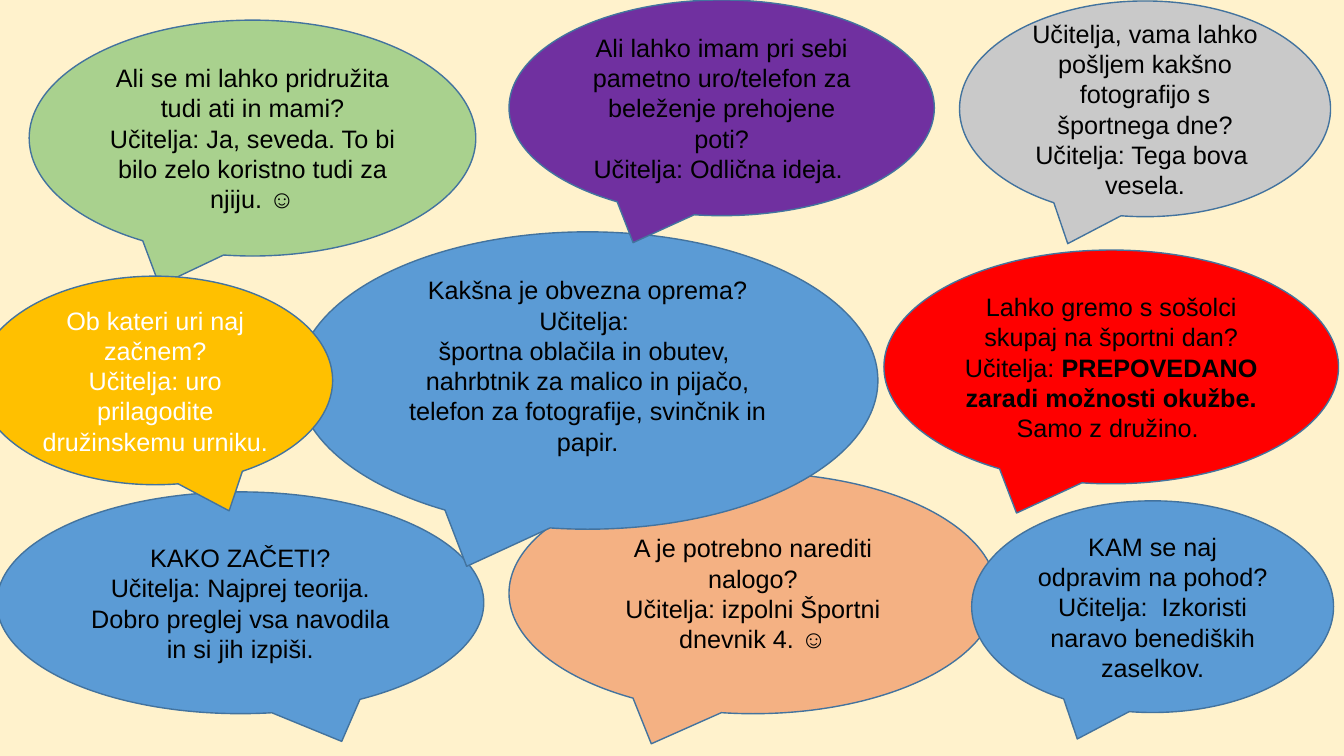
import pptx
import pptx.util
import pptx.dml.color
import pptx.enum.shapes
import pptx.enum.text

Pt = pptx.util.Pt
BLUE = "5B9BD5"
TAIL = 0.2083  # sideways reach of a tail, as a share of the bubble's width


def color(code):
    return pptx.dml.color.RGBColor.from_string(code)


def bubble(slide, box, fill, lines, ink="000000", side=-1, lift=0):
    """Draw a speech bubble; side -1 or 1 sends the tail left or right, lift raises the text.

    Each line is a list of runs; every second run is bold.
    """
    shape = slide.shapes.add_shape(
        pptx.enum.shapes.MSO_SHAPE.OVAL_CALLOUT, *map(Pt, box))
    shape.adjustments[0] = side * TAIL
    shape.adjustments[1] = 0.625
    shape.shadow.inherit = False
    shape.fill.solid()
    shape.fill.fore_color.rgb = color(fill)
    shape.line.color.rgb = color("43739E")
    shape.line.width = Pt(1)

    frame = shape.text_frame
    frame.word_wrap = True
    frame.vertical_anchor = pptx.enum.text.MSO_ANCHOR.MIDDLE
    frame.margin_bottom = Pt(3.6 + 2 * lift)
    for i, runs in enumerate(lines):
        para = frame.paragraphs[0] if i == 0 else frame.add_paragraph()
        para.alignment = pptx.enum.text.PP_ALIGN.CENTER
        for j, text in enumerate(runs):
            run = para.add_run()
            run.text = text
            run.font.name = "Arial"
            run.font.size = Pt(18)
            run.font.bold = j % 2 == 1
            run.font.color.rgb = color(ink)


def build(slide):
    """Place the bubbles from back to front."""
    back = slide.background.fill
    back.solid()
    back.fore_color.rgb = color("FFF2CC")

    bubble(slide, (20.9, 14.4, 319, 168.5), "A9D18E", [
        ["Ali se mi lahko pridružita tudi ati in mami?"],
        ["Učitelja: Ja, seveda. To bi bilo zelo koristno tudi za njiju. ☺"]])
    bubble(slide, (-2.2, 351.4, 347.8, 158.4), BLUE, [
        ["KAKO ZAČETI?"],
        ["Učitelja: Najprej teorija. Dobro preglej vsa navodila in si jih izpiši."]],
        side=1)
    bubble(slide, (363.6, 337.7, 348.5, 172.1), "F4B183", [
        ["A je potrebno narediti nalogo?"],
        ["Učitelja: izpolni Športni dnevnik 4. ☺"]])
    bubble(slide, (685.4, 0.7, 265, 154.1), "C9C9C9", [
        ["Učitelja, vama lahko pošljem kakšno fotografijo s športnega dne?"],
        ["Učitelja: Tega bova  vesela."]])
    bubble(slide, (212.4, 165.6, 414.7, 212.4), BLUE, [
        ["Kakšna je obvezna oprema?"],
        ["Učitelja: "],
        ["športna oblačila in obutev, "],
        ["nahrbtnik za malico in pijačo,"],
        ["telefon za fotografije, svinčnik in papir."]], lift=10.8)
    bubble(slide, (363.6, 0, 303.8, 154.1), "7030A0", [
        ["Ali lahko imam pri sebi pametno uro/telefon za beleženje prehojene poti?"],
        ["Učitelja: Odlična ideja. "]])
    bubble(slide, (631.4, 178.6, 324.7, 167), "FF0000", [
        ["Lahko gremo s sošolci skupaj na športni dan?"],
        ["Učitelja: ", "PREPOVEDANO zaradi možnosti okužbe. ", "Samo z družino. "]])
    bubble(slide, (-15.8, 197.3, 253.4, 149), "FFC000", [
        ["Ob kateri uri naj začnem?"],
        ["Učitelja: uro prilagodite družinskemu urniku. "]],
        ink="FFFFFF", side=1)
    bubble(slide, (694.1, 357.8, 258.5, 151.2), BLUE, [
        ["KAM se naj odpravim na pohod?"],
        ["Učitelja:  Izkoristi naravo benediških zaselkov."]])


def main():
    deck = pptx.Presentation()
    deck.slide_width, deck.slide_height = Pt(960), Pt(540)
    build(deck.slides.add_slide(deck.slide_layouts[6]))
    deck.save("out.pptx")


if __name__ == "__main__":
    main()
